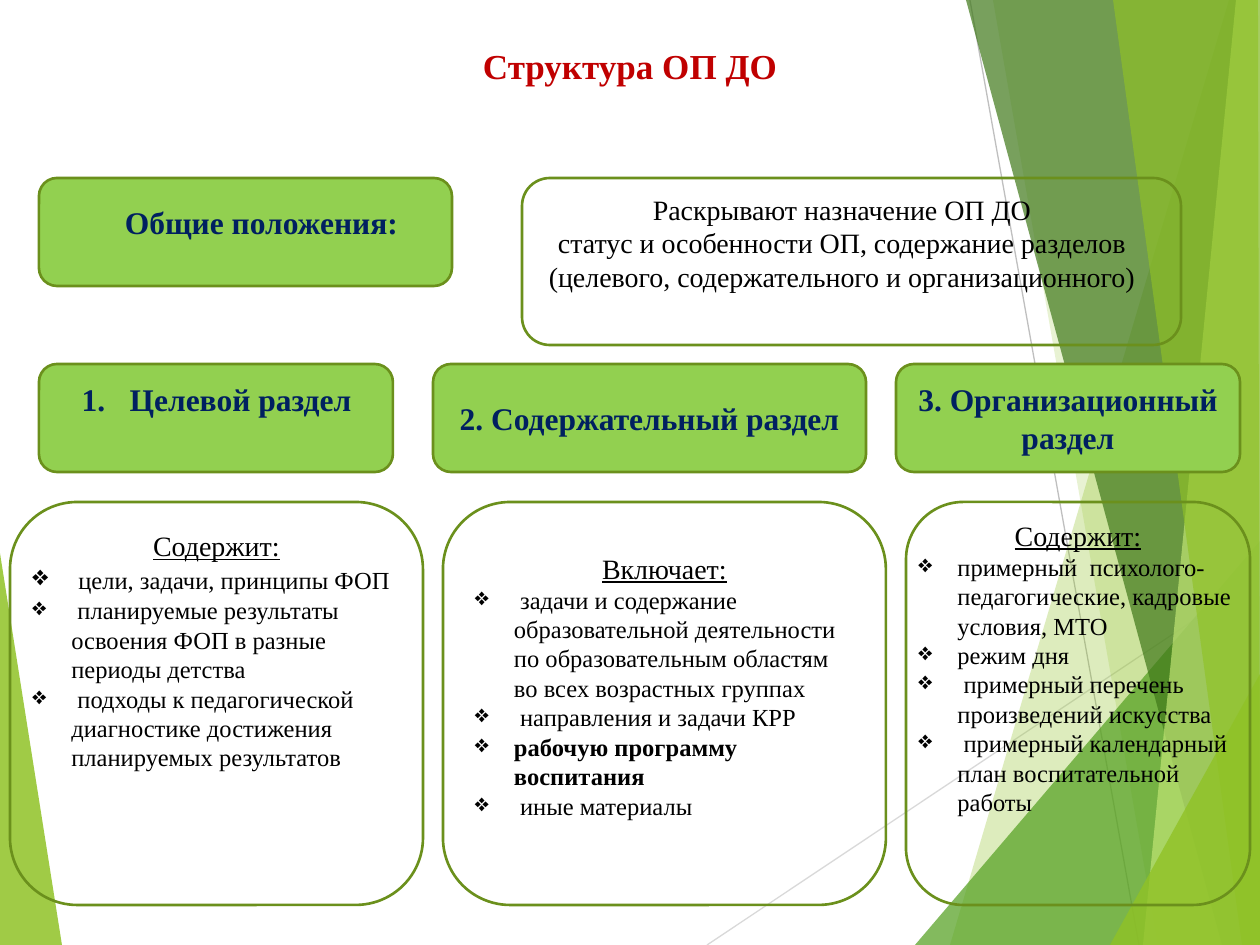
from dataclasses import dataclass

from lxml import etree
from pptx import Presentation
from pptx.dml.color import RGBColor
from pptx.enum.shapes import MSO_CONNECTOR, MSO_SHAPE
from pptx.enum.text import MSO_ANCHOR, PP_ALIGN
from pptx.oxml.ns import qn
from pptx.util import Emu, Pt

ROUNDED = MSO_SHAPE.ROUNDED_RECTANGLE
STRAIGHT = MSO_CONNECTOR.STRAIGHT
TOP, MIDDLE = MSO_ANCHOR.TOP, MSO_ANCHOR.MIDDLE
LEFT, CENTER = PP_ALIGN.LEFT, PP_ALIGN.CENTER
PX = 914400 / 126


@dataclass(frozen=True)
class Theme:
    font: str = "Times New Roman"
    title: str = "C00000"
    heading: str = "002060"
    text: str = "000000"
    header_fill: str = "92D050"
    border: str = "6B901C"
    title_size: int = 20
    heading_size: int = 18
    lead_size: int = 16
    item_size: int = 14


theme = Theme()


def px(*lengths):
    return [Emu(round(length * PX)) for length in lengths]


def write(frame, lines, size, color, bold=False, align=CENTER, bullet=None, indent=39):
    """Append lines to a frame; bullet is a (tag, attribute, value) triple."""
    frame.word_wrap = True
    for line in lines:
        paragraph = frame.paragraphs[0]
        if paragraph.runs:
            paragraph = frame.add_paragraph()
        paragraph.add_run().text = line
        paragraph.alignment = align
        font = paragraph.font
        font.name, font.size, font.bold = theme.font, Pt(size), bold
        font.color.rgb = RGBColor.from_string(color)
        if bullet:
            tag, attribute, value = bullet
            properties = paragraph._p.get_or_add_pPr()
            step = px(indent)[0]
            properties.set("marL", str(step))
            properties.set("indent", str(-step))
            mark = etree.Element(qn(tag))
            mark.set(attribute, value)
            properties.insert(0, mark)


prs = Presentation()
prs.slide_width, prs.slide_height = px(1260, 945)
slide = prs.slides.add_slide(prs.slide_layouts[5])
shapes = slide.shapes

# Background facets: colour, opacity in percent, corners
left_facet = ("90C226", 85, [(0, 553), (62, 945), (0, 945)])
right_facets = [
    ("90C226", 30, [(1229, 0), (950, 945), (1260, 945), (1260, 0)]),
    ("90C226", 20, [(993, 0), (1158, 945), (1260, 945), (1260, 0)]),
    ("54A021", 72, [(915, 945), (1260, 541), (1260, 945)]),
    ("3F7819", 70, [(966, 0), (1222, 945), (1260, 945), (1260, 0)]),
    ("C0E474", 70, [(1236, 0), (1143, 945), (1260, 945), (1260, 0)]),
    ("90C226", 65, [(1113, 0), (1242, 945), (1260, 945), (1258, 0)]),
    ("90C226", 80, [(1110, 945), (1260, 674), (1260, 945)]),
]
rays = [("D9D9D9", (707, 945, 1260, 576)), ("BFBFBF", (970, 0, 1139, 945))]

for color, ends in rays:
    ray = shapes.add_connector(STRAIGHT, *px(*ends))
    ray.line.color.rgb = RGBColor.from_string(color)
    ray.line.width = Pt(0.75)
    etree.SubElement(ray._element.spPr, qn("a:effectLst"))

for color, opacity, corners in [left_facet, *right_facets]:
    builder = shapes.build_freeform(*corners[0], scale=PX)
    builder.add_line_segments(corners[1:], close=True)
    facet = builder.convert_to_shape()
    facet.shadow.inherit = False
    facet.fill.solid()
    facet.fill.fore_color.rgb = RGBColor.from_string(color)
    facet.line.fill.background()
    color_element = facet._element.spPr.find(qn("a:solidFill"))[0]
    etree.SubElement(color_element, qn("a:alpha")).set("val", str(opacity * 1000))

title = shapes.title
title.left, title.top, title.width, title.height = px(63, 38, 1134, 120)
title.text_frame.vertical_anchor = TOP
write(title.text_frame, ["Структура ОП ДО"], theme.title_size, theme.title, bold=True)

# Rounded panels, green for headers and open for contents
HEADER_Y, HEADER_H = 364, 108
CONTENT_Y, CONTENT_H = 502, 403
panel_boxes = {
    "general": (39, 178, 413, HEADER_H),
    "purpose": (522, 178, 659, 167),
    "target header": (39, HEADER_Y, 354, HEADER_H),
    "content header": (433, HEADER_Y, 433, HEADER_H),
    "organization header": (896, HEADER_Y, 344, HEADER_H),
    "target": (10, CONTENT_Y, 413, CONTENT_H),
    "content": (443, CONTENT_Y, 443, CONTENT_H),
    "organization": (906, CONTENT_Y, 344, CONTENT_H),
}
frames = {}
for part, box in panel_boxes.items():
    panel = shapes.add_shape(ROUNDED, *px(*box))
    panel.shadow.inherit = False
    if part == "general" or part.endswith("header"):
        panel.fill.solid()
        panel.fill.fore_color.rgb = RGBColor.from_string(theme.header_fill)
    else:
        panel.fill.background()
    panel.line.color.rgb = RGBColor.from_string(theme.border)
    panel.line.width = Pt(1.5)
    frames[part] = panel.text_frame
    frames[part].vertical_anchor = MIDDLE

# Texts that sit in their own boxes over the panels
text_boxes = {
    "general": (69, 197, 393, 50),
    "purpose": (522, 186, 640, 115),
    "target header": (49, 374, 335, 50),
    "target": (20, 522, 393, 258),
    "organization": (906, 512, 344, 352),
}
for part, box in text_boxes.items():
    frames[part] = shapes.add_textbox(*px(*box)).text_frame

numbered = ("a:buAutoNum", "type", "arabicPeriod")
headers = [
    ("general", "Общие положения: ", None),
    ("target header", "Целевой раздел", numbered),
    ("content header", "2. Содержательный раздел", None),
    ("organization header", "3. Организационный раздел", None),
]
for part, heading, bullet in headers:
    write(frames[part], [heading], theme.heading_size, theme.heading,
          bold=True, bullet=bullet, indent=48)

write(frames["purpose"], [
    "Раскрывают назначение ОП ДО",
    "статус и особенности ОП, содержание разделов (целевого, содержательного и организационного)",
], theme.lead_size, theme.text)

sections = [
    ("target", "Содержит:", [
        " ",
        " планируемые результаты освоения ФОП в разные периоды детства",
        " подходы к педагогической диагностике достижения планируемых результатов",
    ]),
    ("content", "Включает:", [
        " задачи и содержание образовательной деятельности по образовательным областям "
        "во всех возрастных группах",
        " направления и задачи КРР",
        "рабочую программу воспитания",
        " иные материалы",
    ]),
    ("organization", "Содержит:", [
        "примерный  психолого-педагогические, кадровые условия, МТО",
        "режим дня",
        " примерный перечень произведений искусства",
        " примерный календарный план воспитательной работы",
    ]),
]
diamond = ("a:buChar", "char", "❖")
for part, lead, items in sections:
    write(frames[part], [lead], theme.lead_size, theme.text)
    frames[part].paragraphs[0].font.underline = True
    write(frames[part], items, theme.item_size, theme.text, align=LEFT, bullet=diamond)

# The first target item opens with a larger space, which enlarges its bullet
first_target = frames["target"].paragraphs[1]
first_target.runs[0].font.size = Pt(theme.lead_size)
first_target.add_run().text = "цели, задачи, принципы ФОП"

frames["content"].paragraphs[3].font.bold = True
frames["content"].margin_bottom = px(42)[0]

prs.save("out.pptx")
